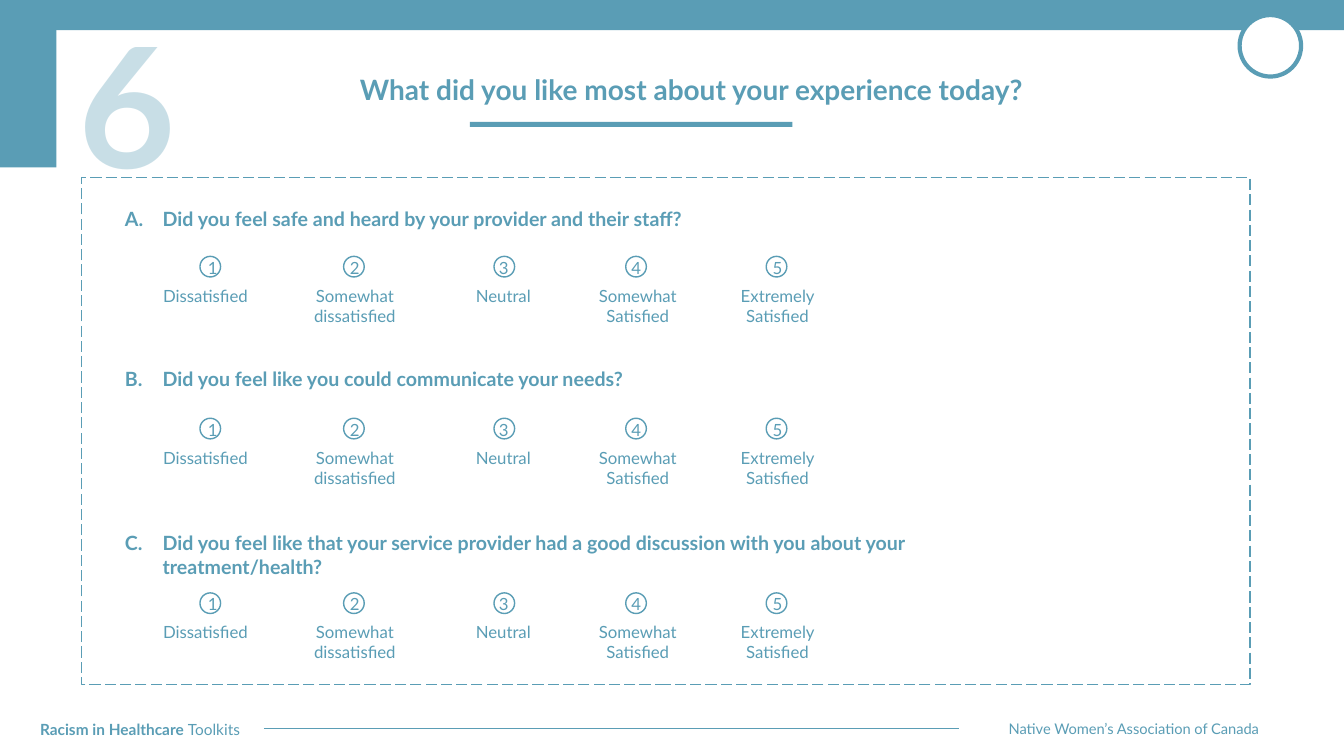
from lxml import etree
from pptx import Presentation
from pptx.dml.color import RGBColor
from pptx.enum.dml import MSO_LINE
from pptx.enum.shapes import MSO_CONNECTOR, MSO_SHAPE
from pptx.enum.text import MSO_ANCHOR, PP_ALIGN
from pptx.oxml.ns import qn
from pptx.util import Cm, Pt

RECT, OVAL = MSO_SHAPE.RECTANGLE, MSO_SHAPE.OVAL
LEFT, CENTER = PP_ALIGN.LEFT, PP_ALIGN.CENTER
TOP, MIDDLE = MSO_ANCHOR.TOP, MSO_ANCHOR.MIDDLE
LONG_DASH = MSO_LINE.LONG_DASH
TEAL, WHITE = "5A9DB5", "FFFFFF"
HEADING = {"alignment": CENTER, "line_spacing": 0.9, "space_after": Pt(6)}

prs = Presentation()
prs.slide_width, prs.slide_height = Cm(33.87), Cm(19.05)
s = prs.slides.add_slide(prs.slide_layouts[6])


def add_shape(kind, x, y, w, h, fill=None, line=None):
    """Add a preset shape; line is the outline width in points."""
    sp = s.shapes.add_shape(kind, Cm(x), Cm(y), Cm(w), Cm(h))
    sp.shadow.inherit = False
    if fill:
        sp.fill.solid()
        sp.fill.fore_color.rgb = RGBColor.from_string(fill)
    else:
        sp.fill.background()
    if line:
        sp.line.width = Pt(line)
        sp.line.color.rgb = RGBColor.from_string(TEAL)
    else:
        sp.line.fill.background()
    return sp


def add_text(x, y, w, h, runs, size, anchor=TOP, fmt=None):
    """Add a one-paragraph text box from (text, bold) runs."""
    tf = s.shapes.add_textbox(Cm(x), Cm(y), Cm(w), Cm(h)).text_frame
    tf.word_wrap = True
    tf.vertical_anchor = anchor
    p = tf.paragraphs[0]
    for name, value in (fmt or {}).items():
        setattr(p, name, value)
    for text, bold in runs:
        r = p.add_run()
        r.text = text
        for name, value in {"name": "Lato", "size": Pt(size), "bold": bold}.items():
            setattr(r.font, name, value)
        r.font.color.rgb = RGBColor.from_string(TEAL)
    return p


# Page frame and footer
add_shape(RECT, 0, 0, 33.87, 0.76, fill=TEAL)
add_shape(OVAL, 31.24, 0.38, 1.55, 1.55, fill=WHITE, line=3)
add_text(25.17, 18.01, 8.4, 0.66, [("Native Women’s Association of Canada", False)], 10.5)
add_text(0.76, 18.01, 5.8, 0.74,
         [("Racism in Healthcare ", True), ("Toolkits", False)], 11)
footer_rule = s.shapes.add_connector(
    MSO_CONNECTOR.STRAIGHT, Cm(6.65), Cm(18.36), Cm(24.16), Cm(18.36))
footer_rule.line.width = Pt(0.5)
footer_rule.line.color.rgb = RGBColor.from_string(TEAL)
etree.SubElement(footer_rule._element.spPr, qn("a:effectLst"))

# Title and section number
add_text(4.19, 1.57, 26.47, 1.45,
         [("What did you like most about your experience today?", True)],
         20, MIDDLE, HEADING)
add_shape(RECT, 11.84, 3.07, 8.13, 0.13, fill=TEAL)
add_shape(RECT, 0, 0, 1.42, 4.22, fill=TEAL)
number = add_text(1.73, 1.73, 2.9, 2.29, [("6", True)], 120, MIDDLE, HEADING)
color = number.runs[0]._r.find(".//" + qn("a:srgbClr"))
etree.SubElement(color, qn("a:alpha"), val="32000")

# Survey: one rating scale under each question
survey_frame = add_shape(RECT, 2.06, 4.47, 29.44, 12.78, line=1)
survey_frame.line.dash_style = LONG_DASH

QUESTIONS = [  # text, question top, scale top, width, height
    ("Did you feel safe and heard by your provider and their staff?",
     5.08, 6.46, 19.38, 0.86),
    ("Did you feel like you could communicate your needs?",
     9.12, 10.54, 22.45, 0.86),
    ("Did you feel like that your service provider had a good discussion "
     "with you about your treatment/health?", 13.26, 14.94, 22.45, 1.45),
]
RATINGS = [  # label, label left, circle left, digit left, alignment
    ("Dissatisfied", 3.86, 5.04, 4.99, LEFT),
    ("Somewhat dissatisfied", 7.42, 8.66, 8.57, CENTER),
    ("Neutral", 11.16, 12.45, 12.32, CENTER),
    ("Somewhat Satisfied", 14.55, 15.77, 15.66, CENTER),
    ("Extremely Satisfied", 18.07, 19.31, 19.22, CENTER),
]
for letter, (question, top, scale_top, width, height) in enumerate(QUESTIONS, 1):
    p = add_text(2.9, top, width, height, [(question, True)], 14)
    pPr = p._p.get_or_add_pPr()
    pPr.set("marL", str(Cm(0.95)))
    pPr.set("indent", str(-Cm(0.95)))
    etree.SubElement(pPr, qn("a:buFont"), typeface="+mj-lt")
    etree.SubElement(pPr, qn("a:buAutoNum"), type="alphaUcPeriod", startAt=str(letter))
    for score, (label, label_x, circle_x, digit_x, align) in enumerate(RATINGS, 1):
        add_text(label_x, scale_top + 0.61, 3.05, 1.27, [(label, False)], 12,
                 fmt={"alignment": align})
        add_shape(OVAL, circle_x, scale_top, 0.52, 0.52, line=1)
        add_text(digit_x, scale_top - 0.1, 0.56, 0.76, [(str(score), False)], 12)

prs.save("out.pptx")
